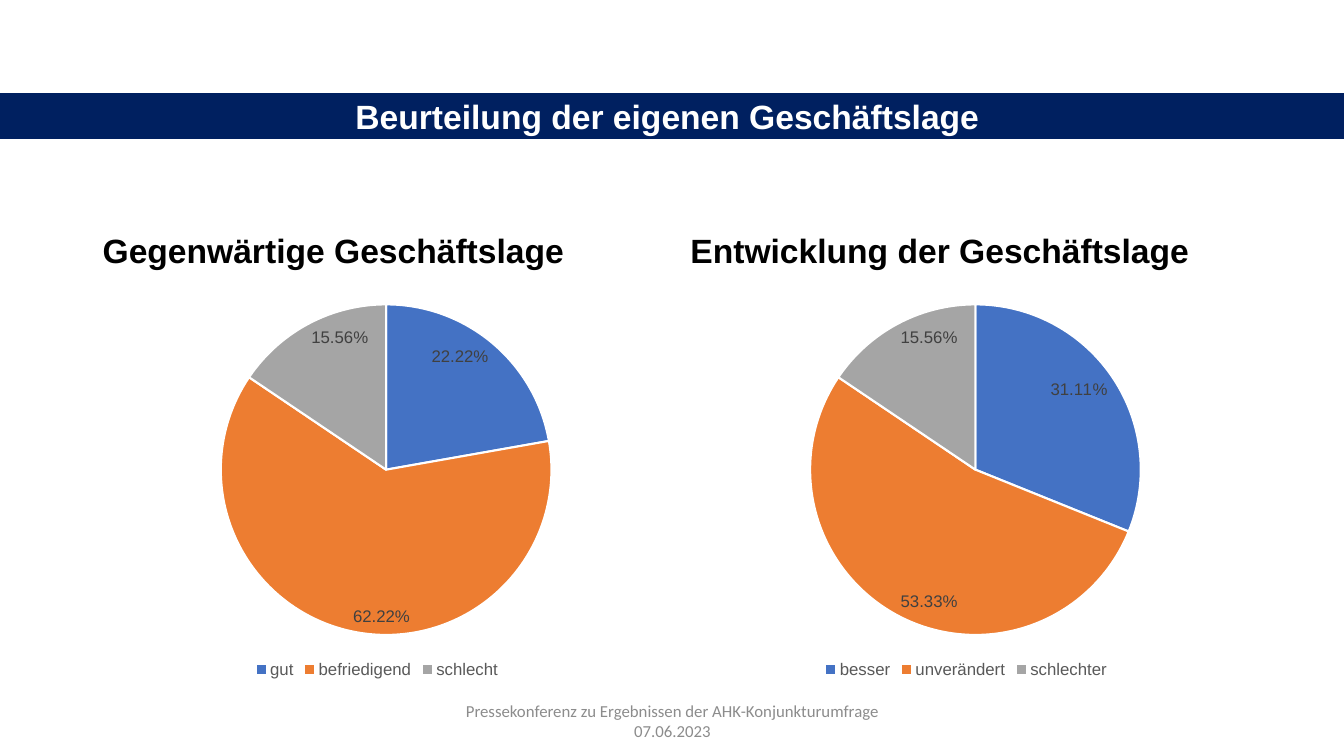
"""Build a slide with two pie charts on the business situation."""
import dataclasses

import lxml.etree
import pptx
import pptx.chart.data
import pptx.dml.color
import pptx.enum.chart
import pptx.enum.shapes
import pptx.enum.text
import pptx.oxml
import pptx.oxml.ns
import pptx.util

Inches = pptx.util.Inches


@dataclasses.dataclass(frozen=True)
class Theme:
    """Colours, fonts and type sizes of the slide."""
    font: str = "Arial"
    footer_font: str = "Calibri"
    heading_size: int = 24
    small_size: int = 12
    navy: str = "002060"
    white: str = "FFFFFF"
    black: str = "000000"
    label: str = "404040"
    legend: str = "595959"
    footer: str = "8C8C8C"
    slices: tuple = ("4472C4", "ED7D31", "A5A5A5")


THEME = Theme()
PANEL_TOP, HEADING_HEIGHT, CHART_HEIGHT = 1.84, 0.9, 4.03
PIE_SIZE, PIE_TOP, PIE_SHIFT = 3.28, 0.28, 0.09


def rgb(value):
    """Return a colour object for a hex value."""
    return pptx.dml.color.RGBColor.from_string(value)


def style_font(font, size, color, name=THEME.font, bold=False):
    """Set the type of a font object."""
    font.name, font.size, font.bold = name, pptx.util.Pt(size), bold
    font.color.rgb = rgb(color)


def write_text(box, text, *, size, color, name=THEME.font, bold=False,
               align="LEFT", anchor="MIDDLE", line_spacing=None):
    """Write one formatted paragraph into a box."""
    frame = box.text_frame
    frame.word_wrap = True
    frame.vertical_anchor = pptx.enum.text.MSO_ANCHOR[anchor]
    para = frame.paragraphs[0]
    para.alignment = pptx.enum.text.PP_ALIGN[align]
    para.line_spacing = line_spacing
    span = para.add_run()
    span.text = text
    style_font(span.font, size, color, name, bold)


def add_text(page, text, left, top, width, height, **text_format):
    """Add a text box."""
    box = page.shapes.add_textbox(*map(Inches, (left, top, width, height)))
    write_text(box, text, **text_format)


def add_banner(page, text):
    """Add the full-width title band."""
    band = page.shapes.add_shape(
        pptx.enum.shapes.MSO_SHAPE.RECTANGLE,
        *map(Inches, (0, 0.93, 13.33, 0.44)))
    band.shadow.inherit = False
    band.fill.solid()
    band.fill.fore_color.rgb = rgb(THEME.navy)
    band.line.color.rgb = rgb(THEME.navy)
    band.line.width = pptx.util.Pt(1)
    write_text(band, text, size=THEME.heading_size, color=THEME.white,
               bold=True, align="CENTER")


def place_pie(chart, width):
    """Fix the square plot area inside the chart frame."""
    plot_area = chart.plots[0]._element.getparent()
    for old in plot_area.findall(pptx.oxml.ns.qn("c:layout")):
        plot_area.remove(old)
    layout = pptx.oxml.parse_xml(
        f'<c:layout {pptx.oxml.ns.nsdecls("c")}><c:manualLayout/></c:layout>')
    settings = {
        "layoutTarget": "inner", "xMode": "edge", "yMode": "edge",
        "x": ((width - PIE_SIZE) / 2 + PIE_SHIFT) / width,
        "y": PIE_TOP / CHART_HEIGHT,
        "w": PIE_SIZE / width, "h": PIE_SIZE / CHART_HEIGHT,
    }
    for key, value in settings.items():
        lxml.etree.SubElement(
            layout[0], pptx.oxml.ns.qn(f"c:{key}")).set("val", str(value))
    plot_area.insert(0, layout)


def add_pie(page, shares, left, top, width):
    """Add a pie chart with value labels and a legend below."""
    data = pptx.chart.data.CategoryChartData(number_format='0.00"%"')
    data.categories = list(shares)
    data.add_series("Series 1", list(shares.values()))
    chart = page.shapes.add_chart(
        pptx.enum.chart.XL_CHART_TYPE.PIE,
        *map(Inches, (left, top, width, CHART_HEIGHT)), data).chart
    style_font(chart.font, THEME.small_size, THEME.legend)
    chart.has_title = False
    chart.has_legend = True
    chart.legend.position = pptx.enum.chart.XL_LEGEND_POSITION.BOTTOM
    chart.legend.include_in_layout = False
    style_font(chart.legend.font, THEME.small_size, THEME.legend)
    plot = chart.plots[0]
    plot.vary_by_categories = True
    for index, color in enumerate(THEME.slices):
        piece = plot.series[0].points[index].format
        piece.fill.solid()
        piece.fill.fore_color.rgb = rgb(color)
        piece.line.color.rgb = rgb(THEME.white)
        piece.line.width = pptx.util.Pt(1.5)
    plot.has_data_labels = True
    labels = plot.data_labels
    labels.show_value, labels.show_percentage = True, False
    labels.number_format, labels.number_format_is_linked = '0.00"%"', False
    labels.position = pptx.enum.chart.XL_LABEL_POSITION.INSIDE_END
    style_font(labels.font, THEME.small_size, THEME.label)
    place_pie(chart, width)


def add_panel(page, heading, shares, left, width):
    """Add a heading with its pie chart."""
    add_text(page, heading, left, PANEL_TOP, width, HEADING_HEIGHT,
             size=THEME.heading_size, color=THEME.black, bold=True,
             anchor="BOTTOM", line_spacing=0.9)
    add_pie(page, shares, left, PANEL_TOP + HEADING_HEIGHT, width)


def main():
    """Build and save the deck."""
    deck = pptx.Presentation()
    deck.slide_width, deck.slide_height = Inches(13.33), Inches(7.5)
    page = deck.slides.add_slide(deck.slide_layouts[6])
    add_panel(page, "Gegenwärtige Geschäftslage",
              {"gut": 22.22, "befriedigend": 62.22, "schlecht": 15.56},
              0.92, 5.64)
    add_panel(page, "Entwicklung der Geschäftslage",
              {"besser": 31.11, "unverändert": 53.33, "schlechter": 15.56},
              6.75, 5.67)
    add_banner(page, "Beurteilung der eigenen Geschäftslage ")
    add_text(page,
             "Pressekonferenz zu Ergebnissen der AHK-Konjunkturumfrage 07.06.2023",
             4.42, 6.95, 4.5, 0.4, size=THEME.small_size, color=THEME.footer,
             name=THEME.footer_font, align="CENTER")
    deck.save("out.pptx")


if __name__ == "__main__":
    main()
